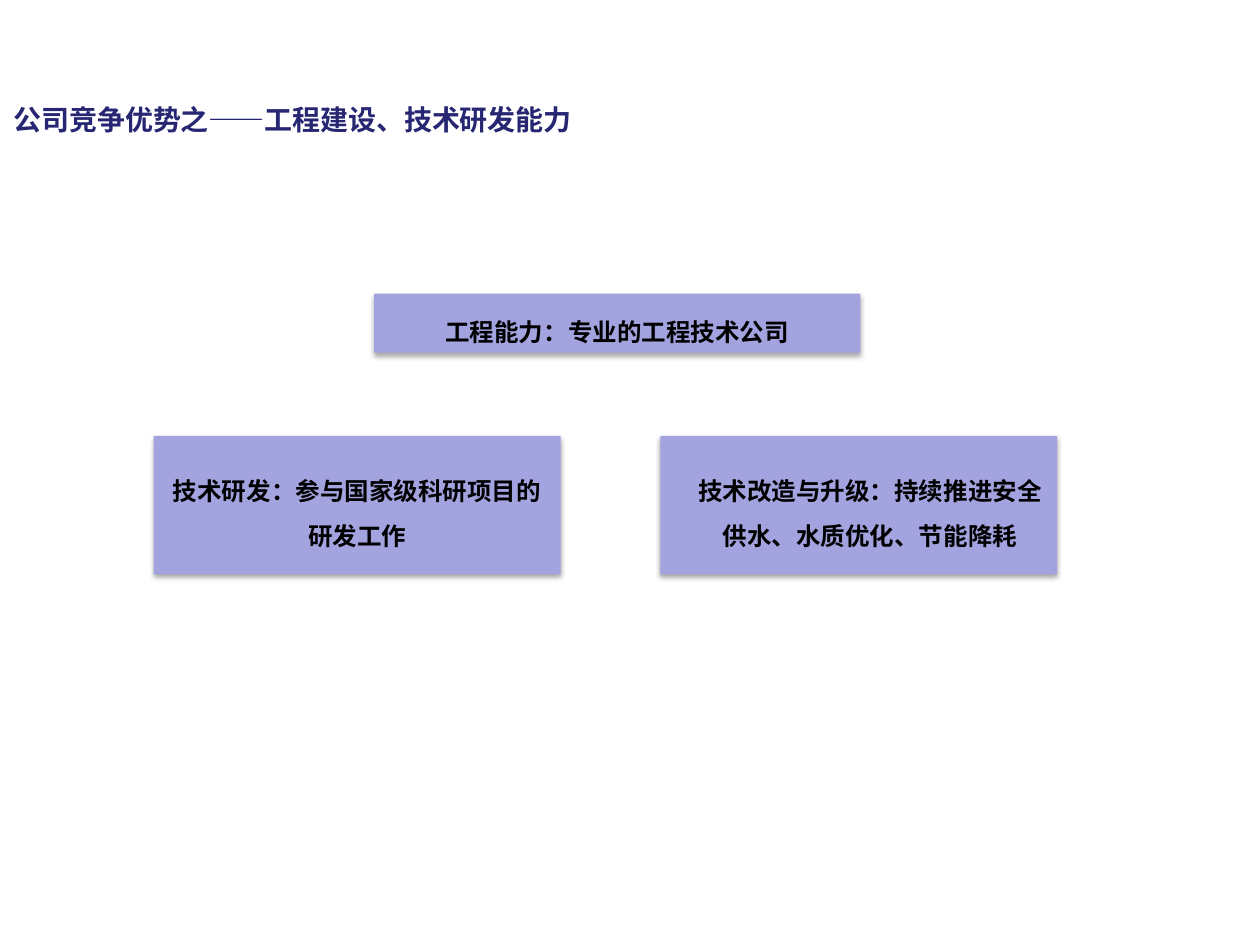
from lxml.etree import SubElement
from pptx import Presentation
from pptx.dml.color import RGBColor
from pptx.enum.shapes import MSO_SHAPE
from pptx.enum.text import MSO_ANCHOR, PP_ALIGN
from pptx.oxml.ns import qn
from pptx.util import Inches, Pt

TITLE = "公司竞争优势之——工程建设、技术研发能力"
TITLE_BOX = (0.01, 0.76, 8.6, 0.37)

# text, (left, top, width, height), left indent
CARDS = [
    ("工程能力：专业的工程技术公司", (2.97, 2.33, 3.86, 0.47), 0),
    ("技术研发：参与国家级科研项目的研发工作", (1.22, 3.46, 3.23, 1.1), 0),
    ("技术改造与升级：持续推进安全供水、水质优化、节能降耗",
     (5.24, 3.46, 3.15, 1.1), 0.18),
]

THEME = {
    "font": "Noto Sans CJK SC",
    "card_fill": RGBColor.from_string("A3A3E0"),
    "title": {"size": Pt(16), "color": RGBColor.from_string("262673")},
    "card": {"size": Pt(14), "color": RGBColor.from_string("000000")},
    "shadow": {"blurRad": Pt(3.1), "dist": Pt(1.8), "dir": 90 * 60000},
    "shadow_alpha": 35 * 1000,
}


def write(shape, text, style, **paragraph_format):
    tf = shape.text_frame
    tf.word_wrap = True
    tf.vertical_anchor = MSO_ANCHOR.MIDDLE
    p = tf.paragraphs[0]
    for name, value in paragraph_format.items():
        setattr(p, name, value)
    r = p.add_run()
    r.text = text
    font = {"name": THEME["font"], "size": style["size"], "bold": True}
    for name, value in font.items():
        setattr(r.font, name, value)
    r.font.color.rgb = style["color"]
    SubElement(r.font._element, qn("a:ea"), typeface=THEME["font"])
    return p


def add_shadow(shape):
    shape.shadow.inherit = False
    effects = shape._element.spPr.find(qn("a:effectLst"))
    attrs = {name: str(int(value)) for name, value in THEME["shadow"].items()}
    outer = SubElement(effects, qn("a:outerShdw"), rotWithShape="0", **attrs)
    color = SubElement(outer, qn("a:srgbClr"), val="000000")
    SubElement(color, qn("a:alpha"), val=str(THEME["shadow_alpha"]))


def add_card(slide, text, box, indent):
    sp = slide.shapes.add_shape(MSO_SHAPE.RECTANGLE, *map(Inches, box))
    sp.fill.solid()
    sp.fill.fore_color.rgb = THEME["card_fill"]
    sp.line.fill.background()
    add_shadow(sp)
    p = write(sp, text, THEME["card"], alignment=PP_ALIGN.CENTER, line_spacing=1.55)
    if indent:
        pPr = p._p.get_or_add_pPr()
        pPr.set("marL", str(Inches(indent)))
        pPr.set("indent", "0")


def main():
    prs = Presentation()
    prs.slide_width, prs.slide_height = Inches(10), Inches(7.5)
    s = prs.slides.add_slide(prs.slide_layouts[6])
    write(s.shapes.add_textbox(*map(Inches, TITLE_BOX)), TITLE, THEME["title"])
    for card in CARDS:
        add_card(s, *card)
    prs.save("out.pptx")


if __name__ == "__main__":
    main()
